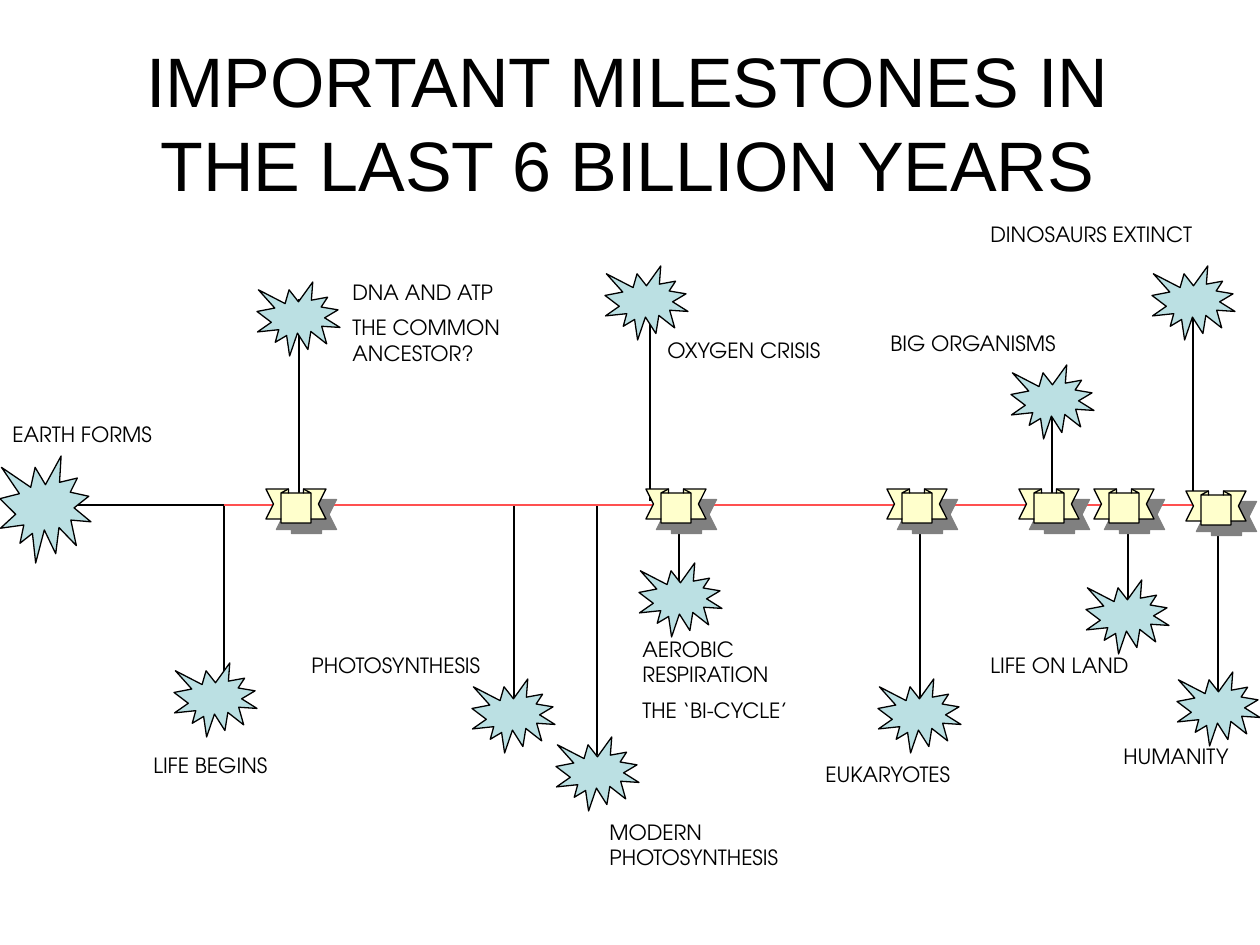
"""Builds a timeline slide of milestones in the last 6 billion years."""
from lxml.etree import SubElement
from pptx import Presentation
from pptx.dml.color import RGBColor
from pptx.enum.shapes import MSO_CONNECTOR as Connector, MSO_SHAPE as Shape
from pptx.enum.text import MSO_ANCHOR as Anchor, MSO_AUTO_SIZE as AutoSize, PP_ALIGN as Align
from pptx.oxml.ns import qn
from pptx.util import Pt

SCALE = 914400 / 126
AXIS = 505
BLACK, RED, BLUE, CREAM, GREY = "000000", "FF5050", "BBE0E3", "FFFFCC", "808080"

STEMS = [
    (224, AXIS, 713), (299, 299, AXIS), (650, 294, 501), (920, AXIS, 713),
    (1128, AXIS, 614), (1052, 406, AXIS), (597, AXIS, 755), (514, AXIS, 713),
    (1218, AXIS, 713), (1193, 299, AXIS),
]
BURSTS = [
    (878, 679), (605, 266), (556, 737), (472, 679), (174, 663), (257, 282),
    (1177, 672), (1152, 266), (1086, 580), (1011, 365),
]
LABELS = [
    (141, 746, 165, 38, ["LIFE BEGINS"]),
    (0, 415, 174, 38, ["EARTH FORMS"]),
    (340, 273, 174, 101, ["DNA AND ATP", "THE COMMON ANCESTOR?"]),
    (655, 331, 241, 38, ["OXYGEN CRISIS"]),
    (597, 813, 241, 63, ["MODERN PHOTOSYNTHESIS"]),
    (299, 646, 207, 38, ["PHOTOSYNTHESIS"]),
    (978, 646, 241, 38, ["LIFE ON LAND"]),
    (878, 324, 199, 38, ["BIG ORGANISMS"]),
    (813, 755, 241, 38, ["EUKARYOTES"]),
    (1111, 737, 149, 38, ["HUMANITY"]),
    (978, 215, 241, 38, ["DINOSAURS EXTINCT"]),
]
RIBBONS = [(266, 489), (1019, 489), (887, 489), (646, 489), (1094, 489), (1186, 491)]
RIBBON_OUTLINE = [
    (3, 0), (3, 4), (5, 4), (5, 0), (8, 0), (7, 15), (8, 30),
    (6, 30), (6, 34), (2, 34), (2, 30), (0, 30), (1, 15),
]
RIBBON_FOLDS = [
    [(2, 30), (2, 4), (3, 4), (2, 4), (3, 0), (2, 4), (2, 30)],
    [(6, 30), (6, 4), (5, 4), (6, 4), (5, 0), (6, 4), (6, 30)],
]


def emu(*lengths):
    """Turn pixel lengths into EMU."""
    return [round(length * SCALE) for length in lengths]


def color(value):
    """Turn a hex string into a colour."""
    return RGBColor.from_string(value)


class Timeline:
    """Holds the style and the current slide."""

    title_font, label_font = "Arial", "TeX Gyre Adventor"
    title_size, label_size, gap, stroke = Pt(40), Pt(12), Pt(6), Pt(0.75)

    def __init__(self, slide):
        """Keep the shapes of the slide."""
        self.shapes = slide.shapes

    def text(self, x, y, width, height, lines, font, size):
        """Add a wrapped text box with one paragraph per line."""
        box = self.shapes.add_textbox(*emu(x, y, width, height))
        frame = box.text_frame
        frame.word_wrap = True
        for index, line in enumerate(lines):
            para = frame.add_paragraph() if index else frame.paragraphs[0]
            if index:
                para.space_before = self.gap
            span = para.add_run()
            span.text = line
            span.font.name, span.font.size = font, size
            span.font.color.rgb = color(BLACK)
        return frame

    def title(self, x, y, width, height, words):
        """Add the centred title."""
        frame = self.text(x, y, width, height, [words], self.title_font, self.title_size)
        frame.vertical_anchor = Anchor.MIDDLE
        frame.paragraphs[0].alignment = Align.CENTER

    def label(self, x, y, width, height, lines):
        """Add a milestone label."""
        frame = self.text(x, y, width, height, lines, self.label_font, self.label_size)
        frame.auto_size = AutoSize.SHAPE_TO_FIT_TEXT

    def line(self, x1, y1, x2, y2, stroke=BLACK):
        """Add a thin straight line."""
        line = self.shapes.add_connector(Connector.STRAIGHT, *emu(x1, y1, x2, y2))
        line.line.color.rgb = color(stroke)
        line.line.width = self.stroke
        SubElement(line._element.spPr, qn("a:effectLst"))

    def paint(self, shape, fill):
        """Give a shape its fill and outline."""
        shape.shadow.inherit = False
        shape.fill.solid()
        shape.fill.fore_color.rgb = color(fill)
        shape.line.color.rgb = color(BLACK)
        shape.line.width = self.stroke

    def burst(self, x, y, width=83, height=74):
        """Add a milestone burst."""
        self.paint(self.shapes.add_shape(Shape.EXPLOSION1, *emu(x, y, width, height)), BLUE)

    def ribbon(self, x, y):
        """Add a folded ribbon with a hard shadow."""
        builder = self.shapes.build_freeform(0, 0, scale=(7.5 * SCALE, SCALE))
        builder.add_line_segments(RIBBON_OUTLINE, close=True)
        for start, *rest in RIBBON_FOLDS:
            builder.move_to(*start)
            builder.add_line_segments(rest, close=False)
        ribbon = builder.convert_to_shape(*emu(x, y))
        self.paint(ribbon, CREAM)
        effects = ribbon._element.spPr.find(qn("a:effectLst"))
        shadow = SubElement(effects, qn("a:outerShdw"), blurRad="0", dist=str(Pt(8.5)),
                            dir="2700000", algn="ctr", rotWithShape="0")
        SubElement(shadow, qn("a:srgbClr"), val=GREY)


def main():
    """Build and save the deck."""
    deck = Presentation()
    deck.slide_width, deck.slide_height = emu(1260, 945)
    page = Timeline(deck.slides.add_slide(deck.slide_layouts[6]))
    page.title(92, 42, 1071, 158, "IMPORTANT MILESTONES IN THE LAST 6 BILLION YEARS")
    page.line(42, AXIS, 1218, AXIS)
    for x, top, bottom in STEMS:
        page.line(x, top, x, bottom)
    page.burst(0, 456, 91, 107)
    for spot in BURSTS:
        page.burst(*spot)
    for label in LABELS:
        page.label(*label)
    page.line(224, AXIS, 1218, AXIS, RED)
    page.line(679, AXIS, 679, 605)
    page.label(630, 630, 241, 101, ["AEROBIC RESPIRATION", "THE ‘BI-CYCLE’"])
    page.burst(639, 563)
    for spot in RIBBONS:
        page.ribbon(*spot)
    deck.save("out.pptx")


if __name__ == "__main__":
    main()
